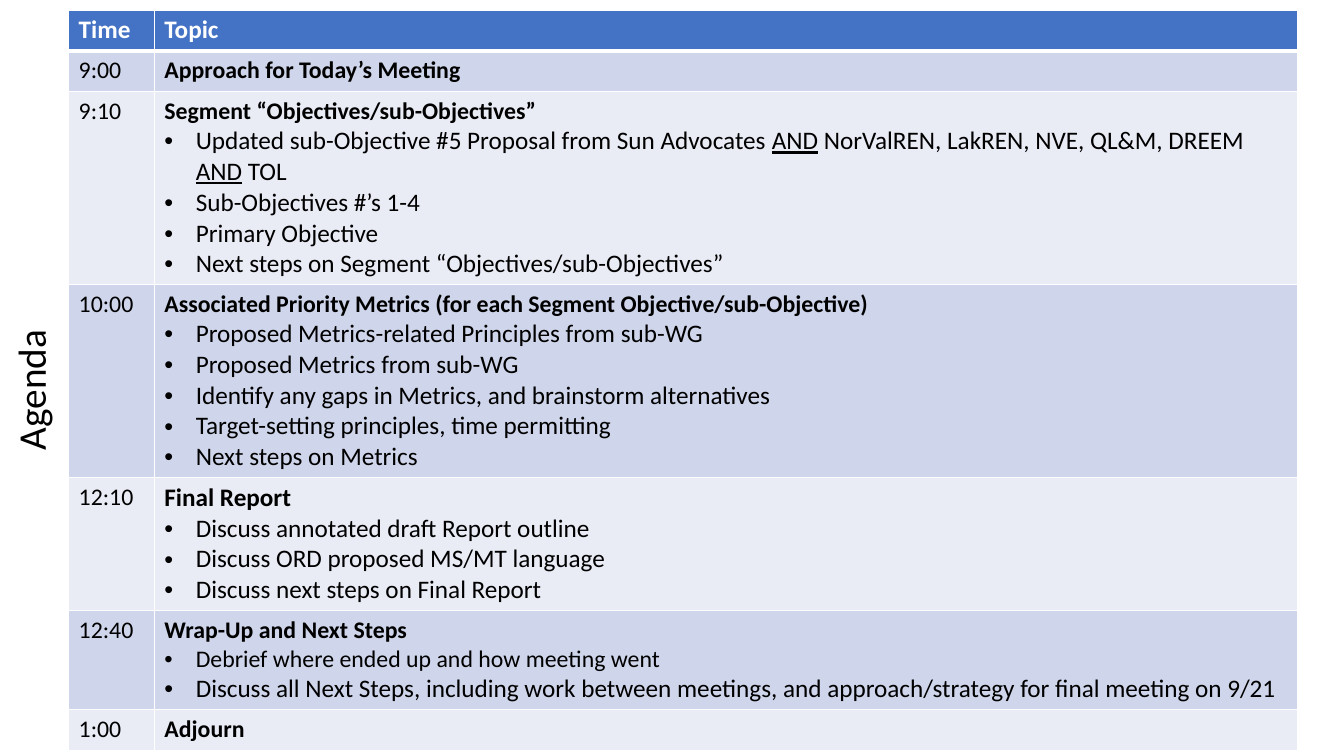
import pptx
import pptx.util
import pptx.dml.color
import pptx.enum.text
import pptx.oxml.ns
from lxml import etree

Cm, Pt = pptx.util.Cm, pptx.util.Pt
qn = pptx.oxml.ns.qn

COLORS = {"header": "4472C4", "dark": "CFD5EA", "light": "E9EBF5",
          "white": "FFFFFF", "black": "000000"}

# Each row: height in cm, time, heading, heading size, [(bullet, size)]; "_" toggles underline
AGENDA = [
    (1.03, "9:00", "Approach for Today’s Meeting", 17, []),
    (4.86, "9:10", "Segment “Objectives/sub-Objectives”", 17, [
        ("Updated sub-Objective #5 Proposal from Sun Advocates _AND_ "
         "NorValREN, LakREN, NVE, QL&M, DREEM _AND_ TOL", 18),
        ("Sub-Objectives #’s 1-4", 18),
        ("Primary Objective", 18),
        ("Next steps on Segment “Objectives/sub-Objectives”", 18)]),
    (4.86, "10:00", "Associated Priority Metrics (for each Segment Objective/sub-Objective)", 17, [
        ("Proposed Metrics-related Principles from sub-WG", 18),
        ("Proposed Metrics from sub-WG", 18),
        ("Identify any gaps in Metrics, and brainstorm alternatives", 18),
        ("Target-setting principles, time permitting", 18),
        ("Next steps on Metrics", 18)]),
    (3.35, "12:10", "Final Report", 18, [
        ("Discuss annotated draft Report outline", 18),
        ("Discuss ORD proposed MS/MT language", 18),
        ("Discuss next steps on Final Report", 18)]),
    (2.5, "12:40", "Wrap-Up and Next Steps", 17, [
        ("Debrief where ended up and how meeting went", 17),
        ("Discuss all Next Steps, including work between meetings, "
         "and approach/strategy for final meeting on 9/21", 18)]),
    (1.03, "1:00", "Adjourn", 17, []),
]


def rgb(name):
    return pptx.dml.color.RGBColor.from_string(COLORS[name])


class AgendaSlide:
    font = "Calibri"

    def __init__(self, prs):
        self.s = prs.slides.add_slide(prs.slide_layouts[6])

    def add_text(self, p, text, size, color="black", bold=False):
        for i, part in enumerate(text.split("_")):
            r = p.add_run()
            r.text = part
            style = {"name": self.font, "size": Pt(size), "bold": bold,
                     "underline": i % 2 == 1}
            for key, value in style.items():
                setattr(r.font, key, value)
            r.font.color.rgb = rgb(color)

    def bullet(self, p):
        pPr = p._p.get_or_add_pPr()
        indent = Cm(0.79)
        pPr.set("marL", str(indent))
        pPr.set("indent", str(-indent))
        etree.SubElement(pPr, qn("a:buFont"), typeface="Arial")
        etree.SubElement(pPr, qn("a:buChar"), char="•")

    def borders(self, cell, bottom):
        tcPr = cell._tc.get_or_add_tcPr()
        widths = {"a:lnL": 1, "a:lnR": 1, "a:lnT": 1, "a:lnB": bottom}
        for tag, width in widths.items():
            ln = etree.SubElement(tcPr, qn(tag), w=str(Pt(width)))
            fill = etree.SubElement(ln, qn("a:solidFill"))
            etree.SubElement(fill, qn("a:srgbClr"), val=COLORS["white"])

    def cell(self, cell, fill, text, size, color="black", bold=False, bullets=(), bottom=1):
        self.borders(cell, bottom)
        cell.fill.solid()
        cell.fill.fore_color.rgb = rgb(fill)
        tf = cell.text_frame
        self.add_text(tf.paragraphs[0], text, size, color, bold)
        for item, item_size in bullets:
            p = tf.add_paragraph()
            self.bullet(p)
            self.add_text(p, item, item_size)

    def side_title(self, text):
        sp = self.s.shapes.add_textbox(Cm(-8.69), Cm(8.89), Cm(19.05), Cm(1.3))
        sp.rotation = 270
        tf = sp.text_frame
        frame = {"word_wrap": True, "margin_left": 0, "margin_right": Cm(0.58),
                 "margin_top": 0, "margin_bottom": 0,
                 "vertical_anchor": pptx.enum.text.MSO_ANCHOR.MIDDLE}
        for key, value in frame.items():
            setattr(tf, key, value)
        p = tf.paragraphs[0]
        p.alignment = pptx.enum.text.PP_ALIGN.CENTER
        p.line_spacing = 0.9
        self.add_text(p, text, 28)

    def agenda_table(self, rows):
        heights = [1.03] + [row[0] for row in rows]
        widths = [2.16, 28.8]
        table = self.s.shapes.add_table(len(heights), len(widths), Cm(1.73), Cm(0.25),
                                        Cm(sum(widths)), Cm(sum(heights))).table
        for column, width in zip(table.columns, widths):
            column.width = Cm(width)
        for row, height in zip(table.rows, heights):
            row.height = Cm(height)

        # Header row
        for i, label in enumerate(["Time", "Topic"]):
            self.cell(table.cell(0, i), "header", label, 18, "white", True, bottom=3)

        # Agenda rows in alternating shades
        for i, (_, time, heading, size, bullets) in enumerate(rows, 1):
            fill = "dark" if i % 2 else "light"
            self.cell(table.cell(i, 0), fill, time, 17)
            self.cell(table.cell(i, 1), fill, heading, size, bold=True, bullets=bullets)


def main():
    prs = pptx.Presentation()
    prs.slide_width, prs.slide_height = Cm(33.87), Cm(19.05)
    slide = AgendaSlide(prs)
    slide.side_title("Agenda")
    slide.agenda_table(AGENDA)
    prs.save("out.pptx")


if __name__ == "__main__":
    main()
